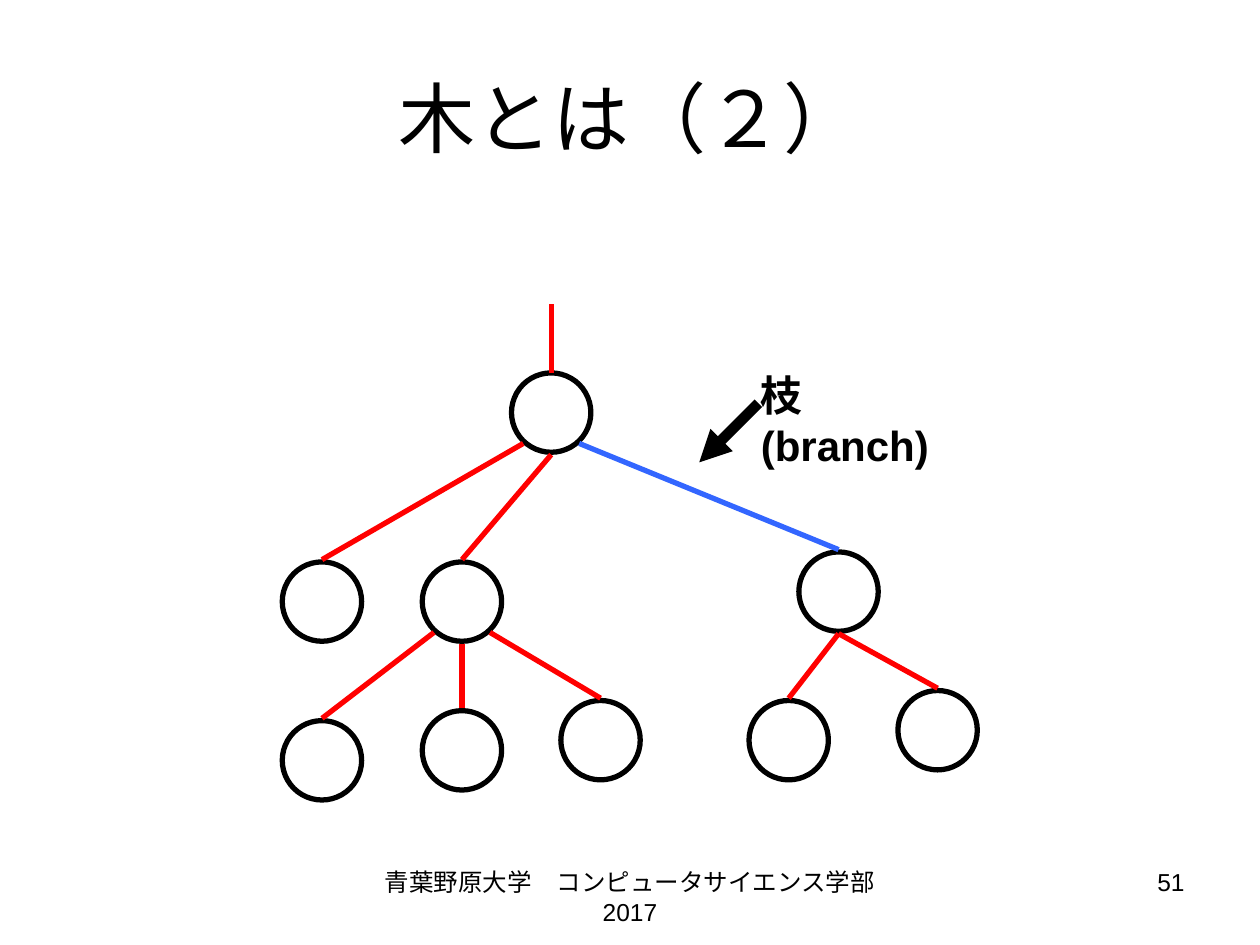
from lxml.etree import SubElement
from pptx import Presentation
from pptx.dml.color import RGBColor
from pptx.enum.shapes import MSO_CONNECTOR as Connector, MSO_SHAPE as Shape
from pptx.enum.text import MSO_ANCHOR as Anchor, MSO_AUTO_SIZE as AutoSize, PP_ALIGN as Align
from pptx.oxml.ns import qn
from pptx.util import Pt

BLACK = RGBColor(0x00, 0x00, 0x00)
RED = RGBColor(0xFF, 0x00, 0x00)
BLUE = RGBColor(0x33, 0x66, 0xFF)

DIAMETER = 45.36
REACH = 24  # from a node's centre to a branch end above or below it
SIDE_X, SIDE_Y = 16, 17.6  # from the centre to a branch end at a lower side

# Centre of each node
NODES = {
    "root": (315, 235.8),
    "left": (184, 343.8),
    "middle": (264, 343.8),
    "right": (479.2, 338.1),
    "middle left": (184, 434.5),
    "middle centre": (264, 428.8),
    "middle right": (343.2, 423),
    "right left": (450.7, 423),
    "right right": (535.8, 417.3),
}

# Parent, child, side of the parent (-1 left, 0 bottom, 1 right), colour
BRANCHES = [
    ("root", "left", -1, RED),
    ("root", "middle", 0, RED),
    ("middle", "middle left", -1, RED),
    ("middle", "middle centre", 0, RED),
    ("middle", "middle right", 1, RED),
    ("root", "right", 1, BLUE),
    ("right", "right left", 0, RED),
    ("right", "right right", 0, RED),
]


def add_text(slide, text, box, size, align=Align.LEFT, bold=False, **frame_format):
    shape = slide.shapes.add_textbox(*map(Pt, box))
    frame = shape.text_frame
    for name, value in {"word_wrap": True, **frame_format}.items():
        setattr(frame, name, value)
    paragraph = frame.paragraphs[0]
    paragraph.alignment = align
    run = paragraph.add_run()
    run.text = text
    for name, value in {"name": "Arial", "size": Pt(size), "bold": bold}.items():
        setattr(run.font, name, value)
    run.font.color.rgb = BLACK


def add_node(slide, x, y):
    radius = DIAMETER / 2
    box = (x - radius, y - radius, DIAMETER, DIAMETER)
    node = slide.shapes.add_shape(Shape.OVAL, *map(Pt, box))
    node.shadow.inherit = False
    node.fill.background()
    node.line.color.rgb = BLACK
    node.line.width = Pt(3)


def add_line(slide, start, end, color, width=3, arrow=False):
    line = slide.shapes.add_connector(Connector.STRAIGHT, *map(Pt, (*start, *end)))
    line.line.color.rgb = color
    line.line.width = Pt(width)
    properties = line.line._get_or_add_ln()
    if arrow:
        SubElement(properties, qn("a:tailEnd"), type="triangle")
    SubElement(properties.getparent(), qn("a:effectLst"))


def add_branch(slide, parent, child, side, color):
    x, y = NODES[parent]
    start = (x + side * SIDE_X, y + (SIDE_Y if side else REACH))
    child_x, child_y = NODES[child]
    add_line(slide, start, (child_x, child_y - REACH), color)


def main():
    presentation = Presentation()
    presentation.slide_width, presentation.slide_height = Pt(720), Pt(540)
    slide = presentation.slides.add_slide(presentation.slide_layouts[6])

    # Title
    add_text(slide, "木とは（２）", (36, 21.6, 648, 90), 44, Align.CENTER,
             vertical_anchor=Anchor.MIDDLE)

    # Tree
    for center in NODES.values():
        add_node(slide, *center)
    for branch in BRANCHES:
        add_branch(slide, *branch)
    root_x, root_y = NODES["root"]
    root_top = root_y - DIAMETER / 2
    add_line(slide, (root_x, root_top), (root_x, root_top - 39.6), RED)

    # Branch label and its arrow
    add_text(slide, "枝(branch)", (427.7, 207.4, 132, 36), 24, bold=True,
             auto_size=AutoSize.SHAPE_TO_FIT_TEXT)
    add_line(slide, (433.4, 230.4), (399.6, 264.2), BLACK, width=6, arrow=True)

    # Footer and page number
    add_text(slide, "青葉野原大学　コンピュータサイエンス学部 2017",
             (204, 492, 312, 37.5), 14, Align.CENTER)
    add_text(slide, "51", (516, 492, 168, 37.5), 14, Align.RIGHT)

    presentation.save("out.pptx")


if __name__ == "__main__":
    main()
